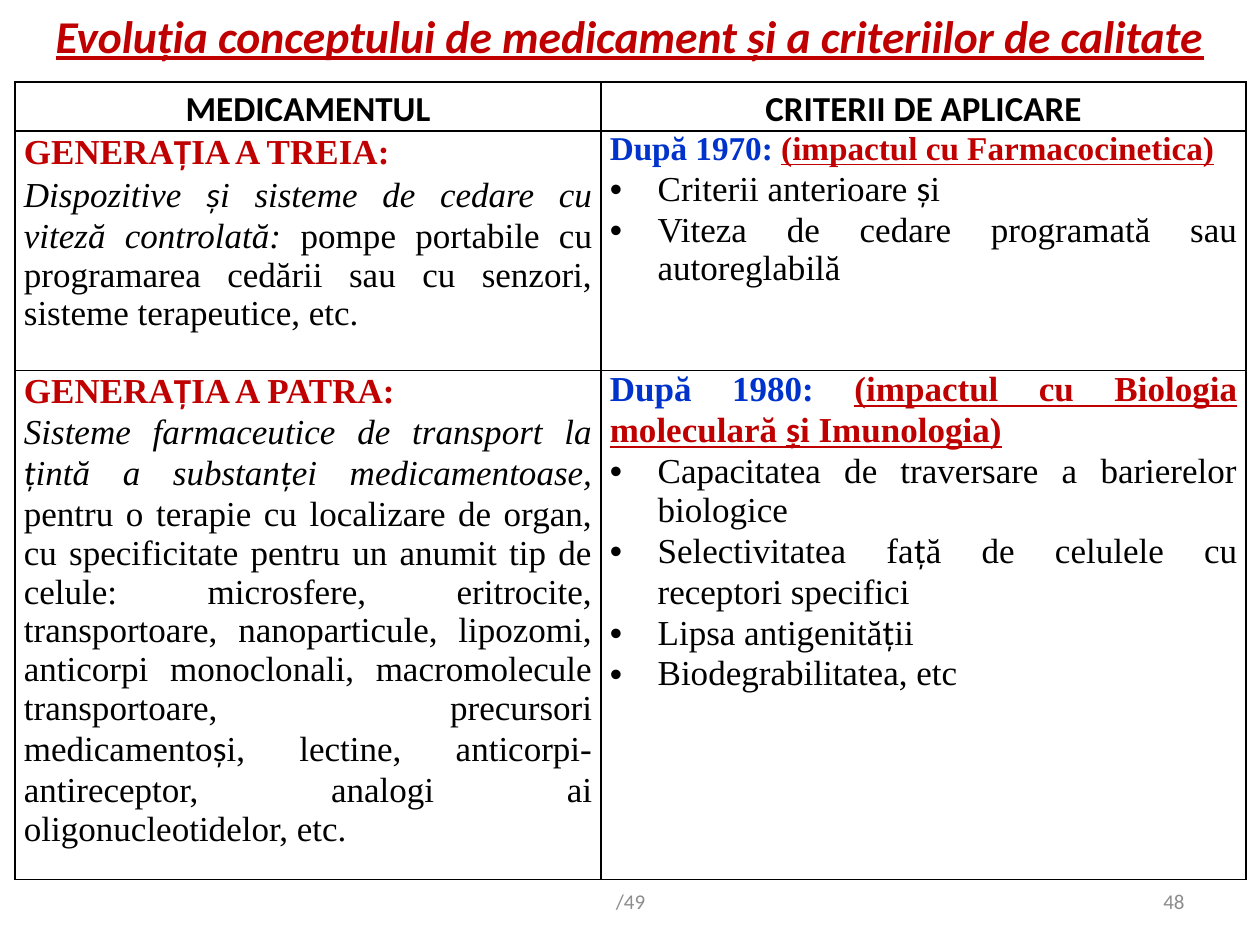
"""Build the slide on the third and fourth generations of medicines."""
from itertools import groupby
from lxml import etree
from pptx import Presentation
from pptx import util as u
from pptx.dml.color import RGBColor
from pptx.enum import text as t
from pptx.oxml import ns

RED, BLUE, BLACK, GREY = "C00000", "0033CC", "000000", "8C8C8C"
SERIF, SANS = "Times New Roman", "Calibri"
ALIGN = {"l": t.PP_ALIGN.LEFT, "c": t.PP_ALIGN.CENTER,
         "r": t.PP_ALIGN.RIGHT, "j": t.PP_ALIGN.JUSTIFY}


def write(par, words, size=20, face=SERIF, color=BLACK, style="", align="j"):
    """Add words to a paragraph, with comma-below letters in the sans face."""
    par.alignment = ALIGN[align]
    for comma, part in groupby(words, lambda c: c in "șțȚ"):
        run = par.add_run()
        run.text = "".join(part)
        font = run.font
        font.size, font.name = u.Pt(size), SANS if comma else face
        font.bold, font.italic = "b" in style, "i" in style
        font.underline = "u" in style
        font.color.rgb = RGBColor.from_string(color)


def add(node, tag, **attrs):
    """Append a drawing element with attributes."""
    return etree.SubElement(node, ns.qn("a:" + tag), attrs)


deck = Presentation()
deck.slide_width, deck.slide_height = u.Inches(10), u.Inches(7.5)
slide = deck.slides.add_slide(deck.slide_layouts[5])

title = slide.shapes.title
title.left, title.top = u.Inches(0), u.Inches(0.05)
title.width, title.height = u.Inches(10), u.Inches(0.46)
title.text_frame.vertical_anchor = t.MSO_ANCHOR.MIDDLE
write(title.text_frame.paragraphs[0],
      "Evoluția conceptului de medicament și a criteriilor de calitate",
      size=26, face=SANS, color=RED, style="biu", align="c")

heads = ["MEDICAMENTUL", "CRITERII DE APLICARE"]
third = [
    [("GENERAȚIA A TREIA:", RED, "b")],
    [("Dispozitive și sisteme de cedare cu viteză controlată: ", BLACK, "i"),
     ("pompe portabile cu programarea cedării sau cu senzori, "
      "sisteme terapeutice, etc.", BLACK, "")],
]
fourth = [
    [("GENERAȚIA A PATRA:", RED, "b")],
    [("Sisteme farmaceutice de transport la țintă a substanței "
      "medicamentoase, ", BLACK, "i"),
     ("pentru o terapie cu localizare de organ, cu specificitate pentru un "
      "anumit tip de celule: microsfere, eritrocite, transportoare, "
      "nanoparticule, lipozomi, anticorpi monoclonali, macromolecule "
      "transportoare, precursori medicamentoși, lectine, "
      "anticorpi-antireceptor, analogi ai oligonucleotidelor, etc.",
      BLACK, "")],
]
rules = [
    ("După 1970: ", "(impactul cu Farmacocinetica)", 19,
     ["Criterii anterioare și",
      "Viteza de cedare programată sau autoreglabilă"]),
    ("După 1980: ", "(impactul cu Biologia moleculară și Imunologia)", 20,
     ["Capacitatea de traversare a barierelor biologice",
      "Selectivitatea față de celulele cu receptori specifici",
      "Lipsa antigenității", "Biodegrabilitatea, etc"]),
]

grid = slide.shapes.add_table(3, 2, u.Inches(0.12), u.Inches(0.65),
                              u.Inches(9.77), u.Inches(6.33)).table
grid.first_row = grid.horz_banding = False
for col, wide in zip(grid.columns, (4.65, 5.12)):
    col.width = u.Inches(wide)
for row, high in zip(grid.rows, (0.39, 1.9, 4.04)):
    row.height = u.Inches(high)

for cell in grid.iter_cells():
    props = cell._tc.get_or_add_tcPr()
    for side in ("lnL", "lnR", "lnT", "lnB"):
        line = add(props, side, w=str(u.Pt(1)))
        add(add(line, "solidFill"), "srgbClr", val=BLACK)
    cell.fill.solid()
    cell.fill.fore_color.rgb = RGBColor.from_string("FFFFFF")
    cell.margin_left = cell.margin_right = u.Inches(0.07)
    cell.margin_top = cell.margin_bottom = 0

for n, head in enumerate(heads):
    cell = grid.cell(0, n)
    cell.margin_left = cell.margin_right = u.Inches(0.05)
    par = cell.text_frame.paragraphs[0]
    par.line_spacing = 1.15
    write(par, head, face=SANS, style="b", align="c")

for n, (body, rule) in enumerate(zip((third, fourth), rules), 1):
    frame = grid.cell(n, 0).text_frame
    for k, parts in enumerate(body):
        par = frame.add_paragraph() if k else frame.paragraphs[0]
        for words, color, style in parts:
            write(par, words, color=color, style=style)
    when, why, size, items = rule
    frame = grid.cell(n, 1).text_frame
    par = frame.paragraphs[0]
    write(par, when, size=size, color=BLUE, style="b")
    write(par, why, size=size, color=RED, style="bu")
    for item in items:
        par = frame.add_paragraph()
        props = par._p.get_or_add_pPr()
        props.set("marL", str(u.Inches(0.38)))
        props.set("indent", str(u.Inches(-0.38)))
        add(props, "buFont", typeface="Arial")
        add(props, "buChar", char="•")
        write(par, item)

for left, wide, words, align in ((7.17, 2.33, "48", "r"),
                                 (3.42, 3.17, "/49", "c")):
    box = slide.shapes.add_textbox(u.Inches(left), u.Inches(6.95),
                                   u.Inches(wide), u.Inches(0.4))
    frame = box.text_frame
    frame.word_wrap = True
    frame.vertical_anchor = t.MSO_ANCHOR.MIDDLE
    write(frame.paragraphs[0], words, size=12, face=SANS, color=GREY,
          align=align)

deck.save("out.pptx")
